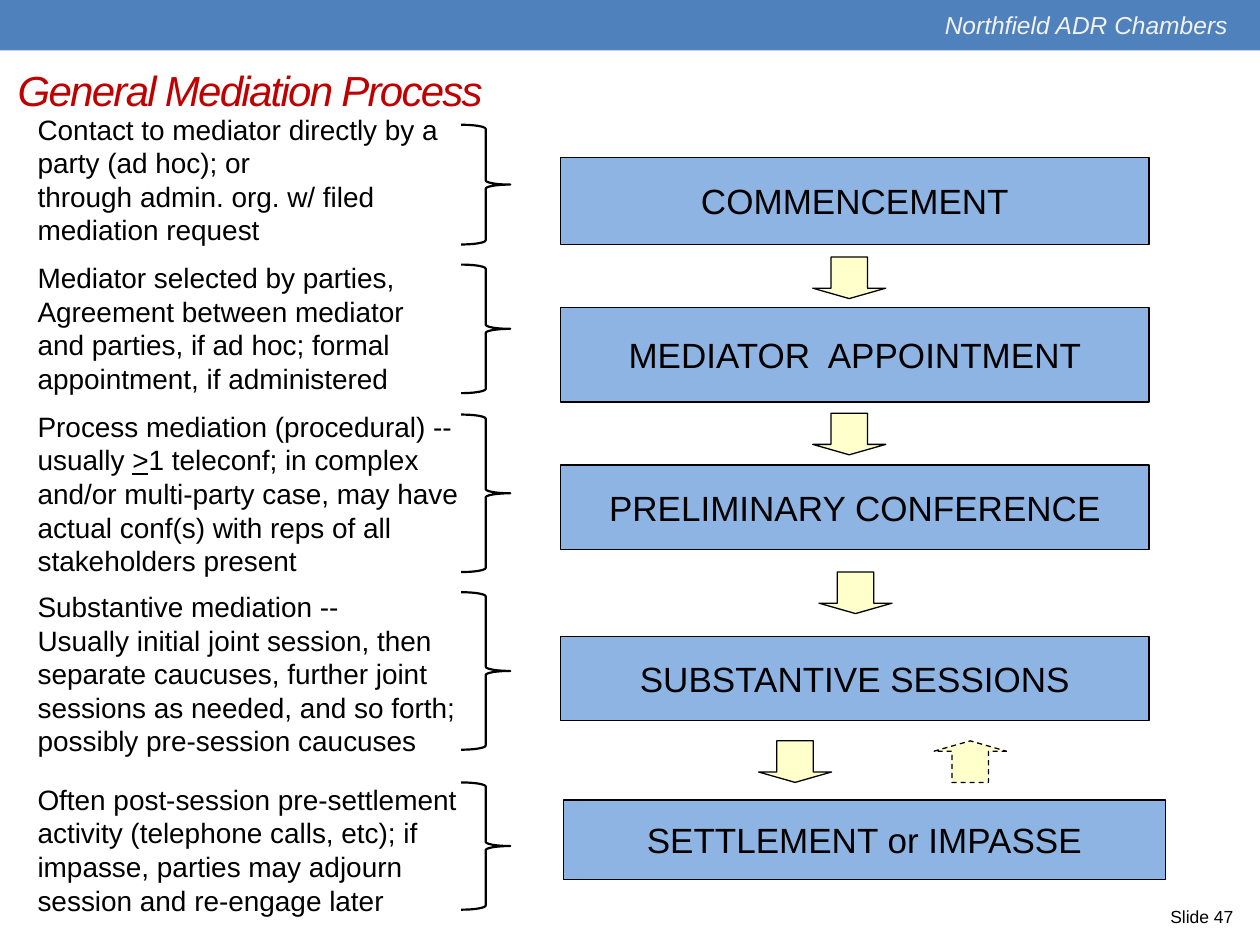
"""Build the mediation process slide: stages, arrows and braced notes."""
from pptx import Presentation
from pptx.dml.color import RGBColor
from pptx.enum.dml import MSO_LINE
from pptx.enum.shapes import MSO_SHAPE
from pptx.enum.text import MSO_ANCHOR, MSO_AUTO_SIZE, PP_ALIGN
from pptx.util import Inches, Pt

RECT, DOWN, BRACE = MSO_SHAPE.RECTANGLE, MSO_SHAPE.DOWN_ARROW, MSO_SHAPE.RIGHT_BRACE
LEFT, CENTER = PP_ALIGN.LEFT, PP_ALIGN.CENTER
MIDDLE, FIXED, DASH = MSO_ANCHOR.MIDDLE, MSO_AUTO_SIZE.NONE, MSO_LINE.DASH
BLACK = RGBColor(0, 0, 0)
BAND = RGBColor(0x4F, 0x81, 0xBD)
BLUE = RGBColor(0x8E, 0xB4, 0xE3)
CREAM = RGBColor(0xFF, 0xFF, 0xCC)
RED = RGBColor(0xC0, 0, 0)
PALE = RGBColor(0xF2, 0xF2, 0xF2)

WIDE, HIGH = 10, 7.5
NOTE_X, BRACE_X, BRACE_W = 0.2, 3.66, 0.39
ARROW_W, ARROW_H = 0.58, 0.33

TITLE = "General Mediation Process"
LABELS = [
    ("Northfield ADR Chambers", (7.4, 0.03, 2.64, 0.34), 14, PALE, True),
    ("Slide 47", (9.19, 7.14, 0.71, 0.27), 10, BLACK, False),
]
STAGES = [
    ("COMMENCEMENT", (4.45, 1.25, 4.67, 0.69)),
    ("MEDIATOR  APPOINTMENT", (4.45, 2.44, 4.67, 0.75)),
    ("PRELIMINARY CONFERENCE", (4.45, 3.69, 4.67, 0.67)),
    ("SUBSTANTIVE SESSIONS", (4.45, 5.05, 4.67, 0.67)),
    ("SETTLEMENT or IMPASSE", (4.47, 6.35, 4.78, 0.63)),
]
ARROWS = [(6.45, 2.04), (6.45, 3.28), (6.5, 4.54), (6.02, 5.88)]
BACK = (7.41, 5.88)
# text paragraphs as runs, note top, width, height, brace top, brace height
NOTES = [
    ([["Contact to mediator directly by a party (ad hoc); or"],
      ["through admin. org. w/ filed mediation request"]],
     0.84, 3.58, 1.12, 0.99, 0.95),
    ([["Mediator selected by parties, Agreement between mediator and parties, "
       "if ad hoc; formal appointment, if administered"]],
     2.02, 3.46, 1.18, 2.1, 1.02),
    ([["Process mediation (procedural) --"],
      ["usually ", ">", "1 teleconf; in complex and/or multi-party case, may have "
       "actual conf(s) with reps of all stakeholders present"]],
     3.2, 3.58, 1.43, 3.29, 1.25),
    ([["Substantive mediation --"],
      ["Usually initial joint session, then separate caucuses, further joint "
       "sessions as needed, and so forth; possibly pre-session caucuses"]],
     4.63, 3.59, 1.4, 4.7, 1.25),
    ([["Often post-session pre-settlement activity (telephone calls, etc); if "
       "impasse, parties may adjourn session and re-engage later"]],
     6.16, 3.63, 1.12, 6.21, 1.01),
]


def style(frame, size, color=BLACK, italic=False, align=LEFT):
    for para in frame.paragraphs:
        para.alignment = align
        for run in para.runs:
            font = run.font
            font.name, font.size, font.italic = "Arial", Pt(size), italic
            font.color.rgb = color


def shape(slide, kind, spot, fill=None, weight=0.75):
    item = slide.shapes.add_shape(kind, *map(Inches, spot))
    item.shadow.inherit = False
    if fill is None:
        item.fill.background()
    else:
        item.fill.solid()
        item.fill.fore_color.rgb = fill
    if weight:
        item.line.color.rgb = BLACK
        item.line.width = Pt(weight)
    else:
        item.line.fill.background()
    return item


def label(slide, paras, spot, size, color=BLACK, italic=False):
    frame = slide.shapes.add_textbox(*map(Inches, spot)).text_frame
    frame.word_wrap = True
    for n, runs in enumerate(paras):
        para = frame.add_paragraph() if n else frame.paragraphs[0]
        for text in runs:
            run = para.add_run()
            run.text = text
            if text == ">":
                run.font.underline = True
    style(frame, size, color, italic)


def head(slide):
    title = slide.shapes.title
    title.left, title.top, title.width, title.height = map(Inches, (0.04, 0.44, 5.43, 0.55))
    frame = title.text_frame
    frame.text = TITLE
    frame.auto_size, frame.vertical_anchor = FIXED, MIDDLE
    style(frame, 24, RED, True)
    frame.paragraphs[0].runs[0].font._element.set("spc", "-100")


def main():
    deck = Presentation()
    deck.slide_width, deck.slide_height = Inches(WIDE), Inches(HIGH)
    slide = deck.slides.add_slide(deck.slide_layouts[5])
    shape(slide, RECT, (0, 0, WIDE, 0.4), BAND, 0)
    head(slide)
    for text, spot, size, color, italic in LABELS:
        label(slide, [[text]], spot, size, color, italic)
    for text, spot in STAGES:
        frame = shape(slide, RECT, spot, BLUE).text_frame
        frame.text = text
        frame.word_wrap, frame.vertical_anchor = False, MIDDLE
        style(frame, 20, align=CENTER)
    for spot in ARROWS + [BACK]:
        arrow = shape(slide, DOWN, (*spot, ARROW_W, ARROW_H), CREAM)
        arrow.adjustments[0], arrow.adjustments[1] = 0.5, 0.25
        if spot == BACK:
            arrow.rotation = 180
            arrow.line.dash_style = DASH
    for paras, top, wide, high, start, span in NOTES:
        label(slide, paras, (NOTE_X, top, wide, high), 16)
        shape(slide, BRACE, (BRACE_X, start, BRACE_W, span), weight=1.25)
    deck.save("out.pptx")


if __name__ == "__main__":
    main()
